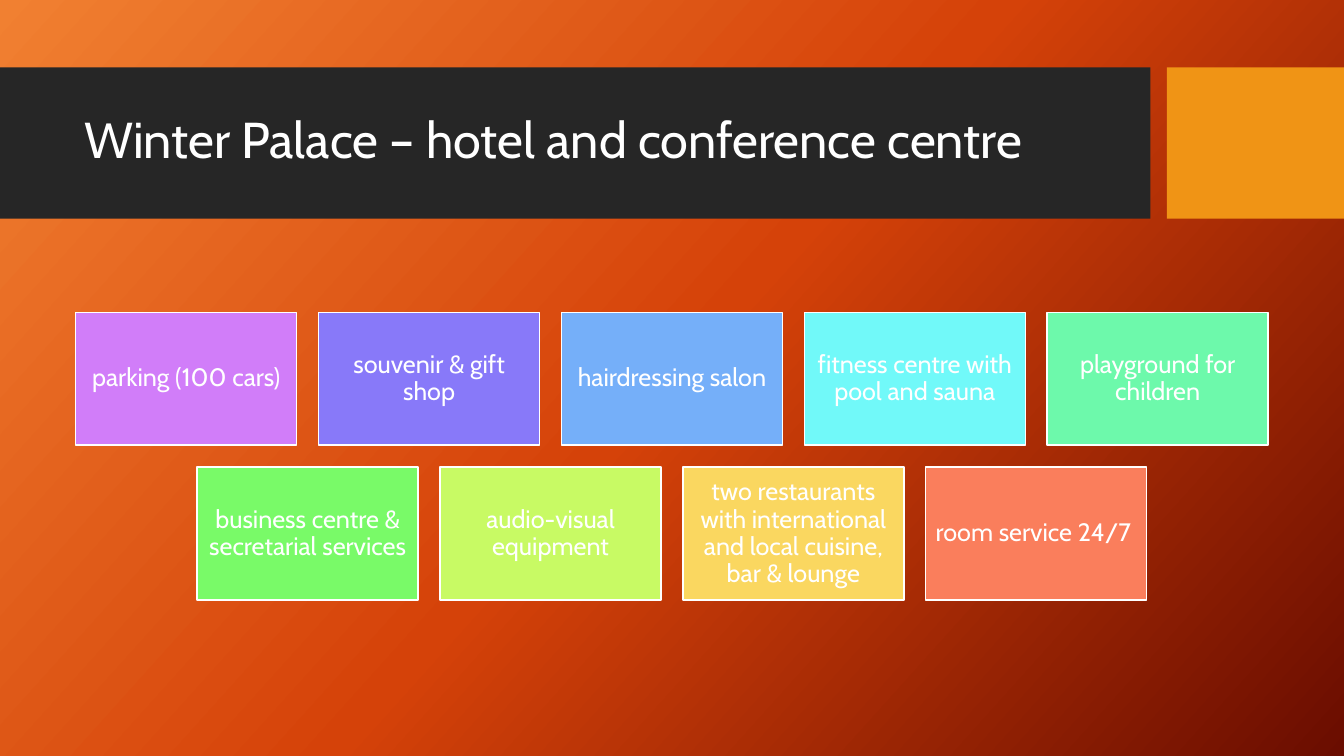
from copy import deepcopy

from pptx import Presentation
from pptx.dml.color import RGBColor
from pptx.enum.shapes import MSO_SHAPE
from pptx.enum.text import MSO_ANCHOR, PP_ALIGN
from pptx.oxml.ns import qn
from pptx.util import Cm, Pt

WHITE = RGBColor(0xFF, 0xFF, 0xFF)
CHARCOAL = RGBColor(0x26, 0x26, 0x26)
AMBER = RGBColor(0xF0, 0x94, 0x15)
LIGHT_ORANGE = RGBColor(0xF1, 0x80, 0x31)
DEEP_ORANGE = RGBColor(0xD5, 0x42, 0x09)
MAROON = RGBColor(0x6A, 0x0D, 0x00)
VIOLET = RGBColor(0xD1, 0x7D, 0xF9)
INDIGO = RGBColor(0x88, 0x79, 0xF9)
BLUE = RGBColor(0x75, 0xAF, 0xF9)
CYAN = RGBColor(0x71, 0xF9, 0xF9)
MINT = RGBColor(0x6D, 0xF9, 0xAB)
GREEN = RGBColor(0x79, 0xFA, 0x68)
LIME = RGBColor(0xC8, 0xFA, 0x64)
YELLOW = RGBColor(0xFA, 0xD7, 0x60)
CORAL = RGBColor(0xFA, 0x7E, 0x5C)

SLIDE_WIDTH, SLIDE_HEIGHT = 33.87, 19.05
BAND_TOP, BAND_HEIGHT = 1.7, 3.81
TILE_WIDTH, TILE_HEIGHT, TILE_GAP = 5.57, 3.35, 0.55
TILES_TOP = 7.87

SERVICE_ROWS = [
    [
        ("parking (100 cars)", VIOLET),
        ("souvenir & gift shop", INDIGO),
        ("hairdressing salon", BLUE),
        ("fitness centre with pool and sauna", CYAN),
        ("playground for children", MINT),
    ],
    [
        ("business centre & secretarial services", GREEN),
        ("audio-visual equipment", LIME),
        ("two restaurants with international and local cuisine, bar & lounge", YELLOW),
        ("room service 24/7 ", CORAL),
    ],
]


class SlideBuilder:
    font_name = "Cabin"
    text_color = WHITE
    line_spacing = 0.9

    def __init__(self, slide):
        self.slide = slide

    def gradient_background(self, colors, angle):
        fill = self.slide.background.fill
        fill.gradient()
        fill.gradient_angle = angle
        stop_list = self.slide.element.find(".//" + qn("a:gsLst"))
        while len(stop_list) < len(colors):
            stop_list.append(deepcopy(stop_list[0]))
        for index, (stop, color) in enumerate(zip(fill.gradient_stops, colors)):
            stop.color.rgb = color
            stop.position = index / (len(colors) - 1)

    def rectangle(self, left, top, width, height, color):
        shape = self.slide.shapes.add_shape(
            MSO_SHAPE.RECTANGLE, Cm(left), Cm(top), Cm(width), Cm(height)
        )
        shape.shadow.inherit = False
        shape.fill.solid()
        shape.fill.fore_color.rgb = color
        shape.line.fill.background()
        return shape

    def add_text(self, frame, text, size, alignment):
        frame.word_wrap = True
        frame.vertical_anchor = MSO_ANCHOR.MIDDLE
        paragraph = frame.paragraphs[0]
        paragraph.alignment = alignment
        paragraph.line_spacing = self.line_spacing
        run = paragraph.add_run()
        run.text = text
        run.font.name = self.font_name
        run.font.size = Pt(size)
        run.font.color.rgb = self.text_color

    def title(self, left, top, width, height, text):
        box = self.slide.shapes.add_textbox(Cm(left), Cm(top), Cm(width), Cm(height))
        self.add_text(box.text_frame, text, 36, PP_ALIGN.LEFT)

    def tile(self, left, top, text, color):
        shape = self.rectangle(left, top, TILE_WIDTH, TILE_HEIGHT, color)
        shape.line.color.rgb = WHITE
        shape.line.width = Pt(1)
        frame = shape.text_frame
        frame.margin_left = frame.margin_right = Cm(0.18)
        frame.margin_top = frame.margin_bottom = Cm(0.18)
        self.add_text(frame, text, 18, PP_ALIGN.CENTER)

    def centred_row(self, top, services):
        pitch = TILE_WIDTH + TILE_GAP
        left = (SLIDE_WIDTH - len(services) * pitch + TILE_GAP) / 2
        for column, (text, color) in enumerate(services):
            self.tile(left + column * pitch, top, text, color)


def main():
    presentation = Presentation()
    presentation.slide_width = Cm(SLIDE_WIDTH)
    presentation.slide_height = Cm(SLIDE_HEIGHT)
    builder = SlideBuilder(presentation.slides.add_slide(presentation.slide_layouts[6]))

    builder.gradient_background([LIGHT_ORANGE, DEEP_ORANGE, MAROON], 360 - 42)
    builder.rectangle(0, BAND_TOP, 28.99, BAND_HEIGHT, CHARCOAL)
    builder.rectangle(29.41, BAND_TOP, SLIDE_WIDTH - 29.41, BAND_HEIGHT, AMBER)
    builder.title(1.88, 2.08, 26.7, 3, "Winter Palace – hotel and conference centre")
    for row, services in enumerate(SERVICE_ROWS):
        builder.centred_row(TILES_TOP + row * (TILE_HEIGHT + TILE_GAP), services)

    presentation.save("out.pptx")


if __name__ == "__main__":
    main()
